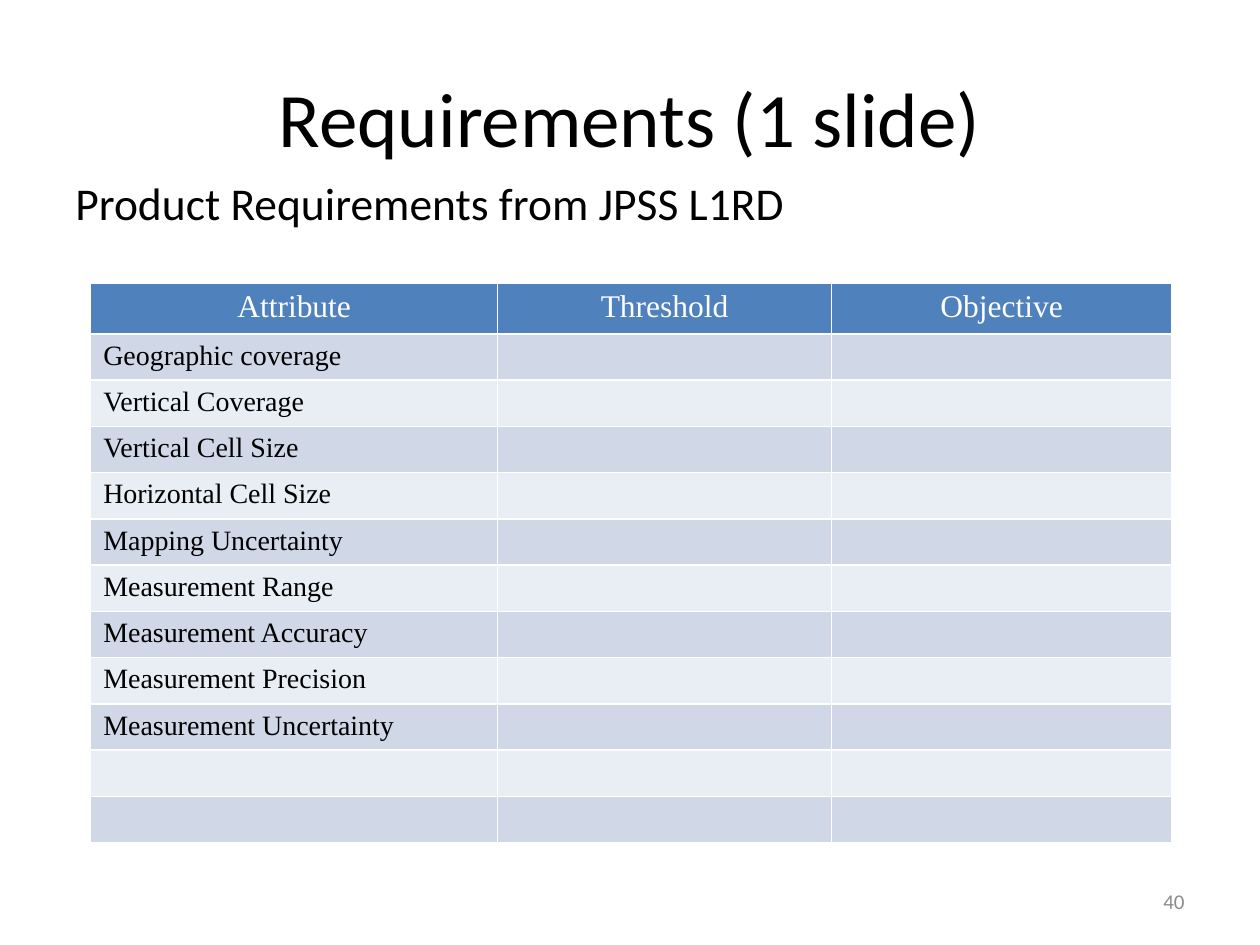
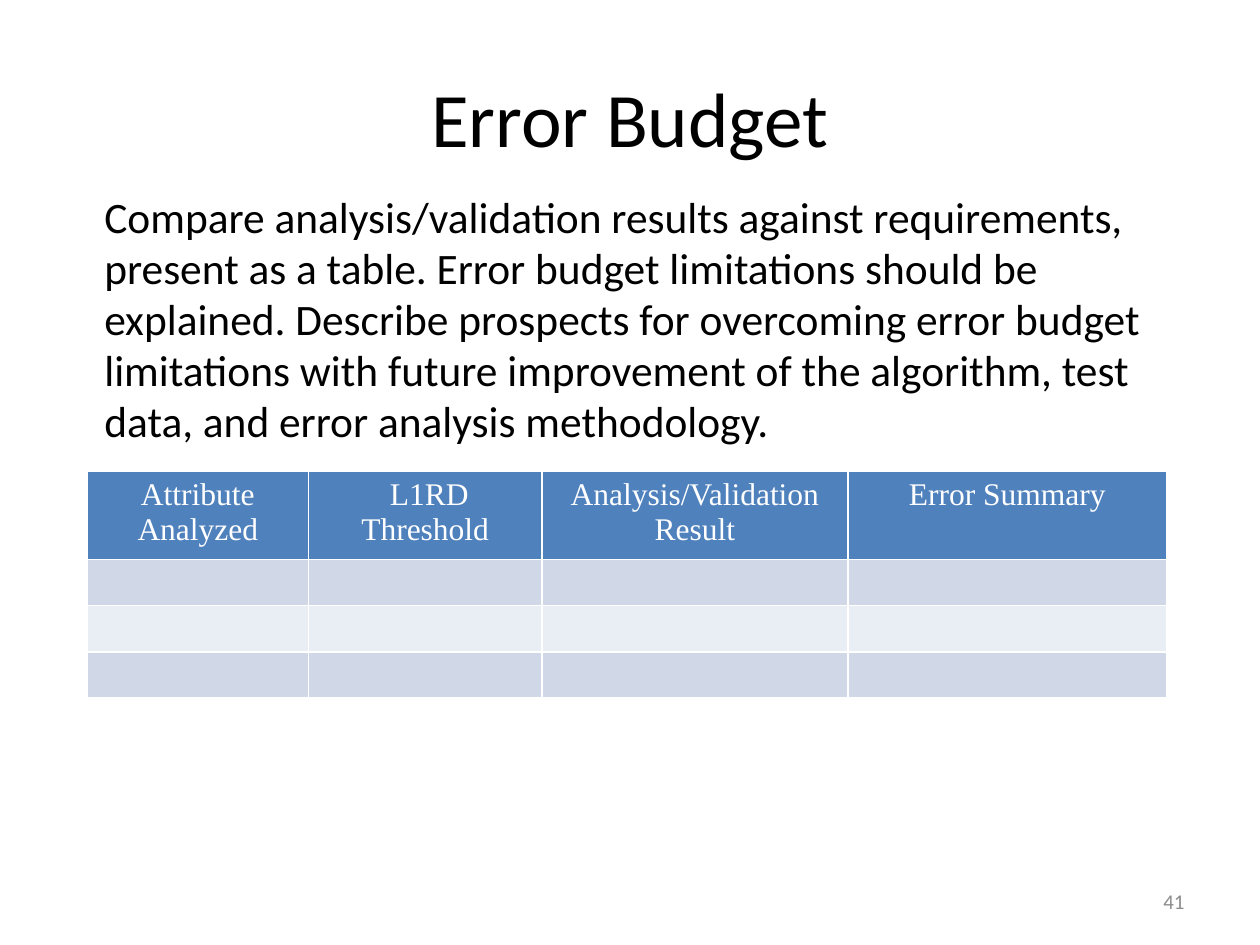
from dataclasses import dataclass

from lxml import etree
from pptx import Presentation
from pptx.dml.color import RGBColor
from pptx.enum import text as t
from pptx.oxml import ns
from pptx.util import Inches, Pt

# Content
SLIDES = [
    {
        "title": "Requirements (1 slide)",
        "number": "40",
        "intro": {
            "words": "Product Requirements from JPSS L1RD",
            "box": (0.5, 1.34, 9, 0.7), "size": 26,
            "before": 5.2, "after": 0, "spacing": 1.0,
        },
        "table": {
            "corner": (0.72, 2.25),
            "columns": [("Attribute", 3.23), ("Threshold", 2.65), ("Objective", 2.7)],
            "attributes": [
                "Geographic coverage", "Vertical Coverage", "Vertical Cell Size",
                "Horizontal Cell Size", "Mapping Uncertainty", "Measurement Range",
                "Measurement Accuracy", "Measurement Precision",
                "Measurement Uncertainty", "", "",
            ],
        },
    },
    {
        "title": "Error Budget",
        "number": "41",
        "intro": {
            "words": "Compare analysis/validation results against requirements, "
                     "present as a table. Error budget limitations should be explained. "
                     "Describe prospects for overcoming error budget limitations with "
                     "future improvement of the algorithm, test data, and error "
                     "analysis methodology.",
            "box": (0.73, 1.48, 8.5, 1.87), "size": 24.8,
            "before": 3, "after": 6, "spacing": 0.98,
        },
        "table": {
            "corner": (0.69, 3.74),
            "columns": [("Attribute Analyzed", 1.76), (" L1RD Threshold", 1.85),
                        ("Analysis/Validation Result", 2.43), ("Error Summary", 2.53)],
            "attributes": ["", "", ""],
        },
    },
]


# Theme
@dataclass(frozen=True)
class Theme:
    ink: RGBColor = RGBColor(0x00, 0x00, 0x00)
    white: RGBColor = RGBColor(0xFF, 0xFF, 0xFF)
    muted: RGBColor = RGBColor(0x8C, 0x8C, 0x8C)
    header: RGBColor = RGBColor(0x4F, 0x81, 0xBD)
    bands: tuple = (RGBColor(0xD0, 0xD8, 0xE8), RGBColor(0xE9, 0xED, 0xF4))
    sans: str = "Calibri"
    serif: str = "Times New Roman"
    title_size: float = 44
    header_size: float = 18
    cell_size: float = 16
    number_size: float = 12


THEME = Theme()
TITLE_BOX = (0.5, 0.3, 9, 1.25)
NUMBER_BOX = (7.17, 6.95, 2.33, 0.4)
HEADER_HEIGHT, ROW_HEIGHT = 0.39, 0.35


def write(frame, words, font, size, color, align=t.PP_ALIGN.LEFT):
    """Set one paragraph of text and format it."""
    frame.text = words
    paragraph = frame.paragraphs[0]
    paragraph.alignment = align
    for run in paragraph.runs:
        run.font.name, run.font.size = font, Pt(size)
        run.font.bold = False
        run.font.color.rgb = color
    if not words:  # an empty cell takes its height from the end mark
        end = etree.SubElement(paragraph._p, ns.qn("a:endParaRPr"))
        end.set("sz", str(int(size * 100)))
        etree.SubElement(end, ns.qn("a:latin")).set("typeface", font)
    return paragraph


def add_text(slide, box, anchor):
    frame = slide.shapes.add_textbox(*map(Inches, box)).text_frame
    frame.word_wrap = True
    frame.vertical_anchor = anchor
    return frame


def add_title(slide, words):
    title = slide.shapes.title
    title.left, title.top, title.width, title.height = map(Inches, TITLE_BOX)
    title.text_frame.vertical_anchor = t.MSO_ANCHOR.MIDDLE
    write(title.text_frame, words, THEME.sans, THEME.title_size, THEME.ink,
          t.PP_ALIGN.CENTER)


def add_intro(slide, intro):
    frame = add_text(slide, intro["box"], t.MSO_ANCHOR.TOP)
    paragraph = write(frame, intro["words"], THEME.sans, intro["size"], THEME.ink)
    paragraph.space_before = Pt(intro["before"])
    paragraph.space_after = Pt(intro["after"])
    paragraph.line_spacing = intro["spacing"]


def add_number(slide, number):
    frame = add_text(slide, NUMBER_BOX, t.MSO_ANCHOR.MIDDLE)
    write(frame, number, THEME.sans, THEME.number_size, THEME.muted, t.PP_ALIGN.RIGHT)


def add_banded_table(slide, corner, columns, attributes):
    """Header row, then one row per attribute with the other cells left open."""
    headings, widths = zip(*columns)
    rows = [headings] + [[name] + [""] * (len(columns) - 1) for name in attributes]
    heights = [HEADER_HEIGHT] + [ROW_HEIGHT] * len(attributes)
    extent = (*corner, sum(widths), sum(heights))
    table = slide.shapes.add_table(len(rows), len(columns), *map(Inches, extent)).table
    for column, width in zip(table.columns, widths):
        column.width = Inches(width)
    for r, (row, height) in enumerate(zip(rows, heights)):
        table.rows[r].height = Inches(height)
        for c, words in enumerate(row):
            cell = table.cell(r, c)
            cell.fill.solid()
            if r == 0:
                cell.fill.fore_color.rgb = THEME.header
                write(cell.text_frame, words, THEME.serif, THEME.header_size,
                      THEME.white, t.PP_ALIGN.CENTER)
            else:
                cell.fill.fore_color.rgb = THEME.bands[(r - 1) % 2]
                write(cell.text_frame, words, THEME.serif, THEME.cell_size, THEME.ink)


# Build
def main():
    deck = Presentation()
    deck.slide_width, deck.slide_height = Inches(10), Inches(7.5)
    title_only = deck.slide_layouts[5]
    for content in SLIDES:
        slide = deck.slides.add_slide(title_only)
        add_title(slide, content["title"])
        add_intro(slide, content["intro"])
        add_number(slide, content["number"])
        add_banded_table(slide, **content["table"])
    deck.save("out.pptx")


if __name__ == "__main__":
    main()
